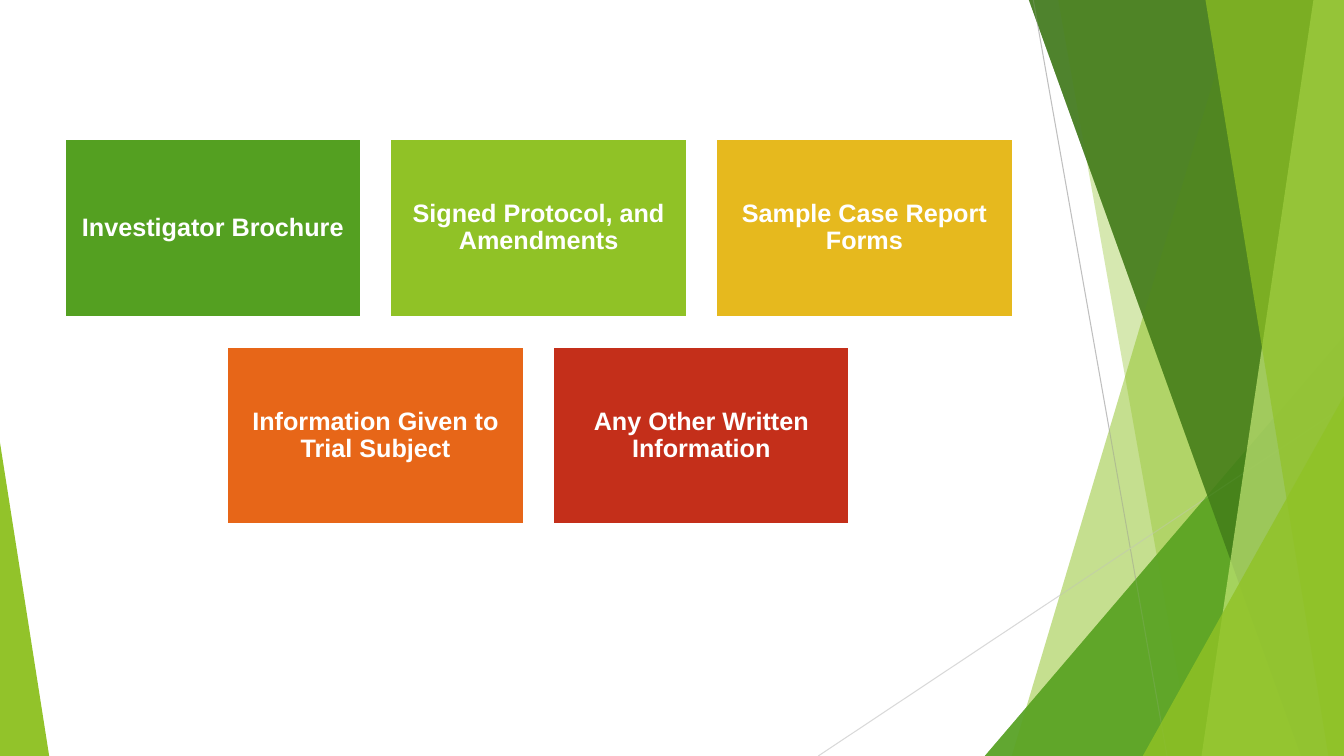
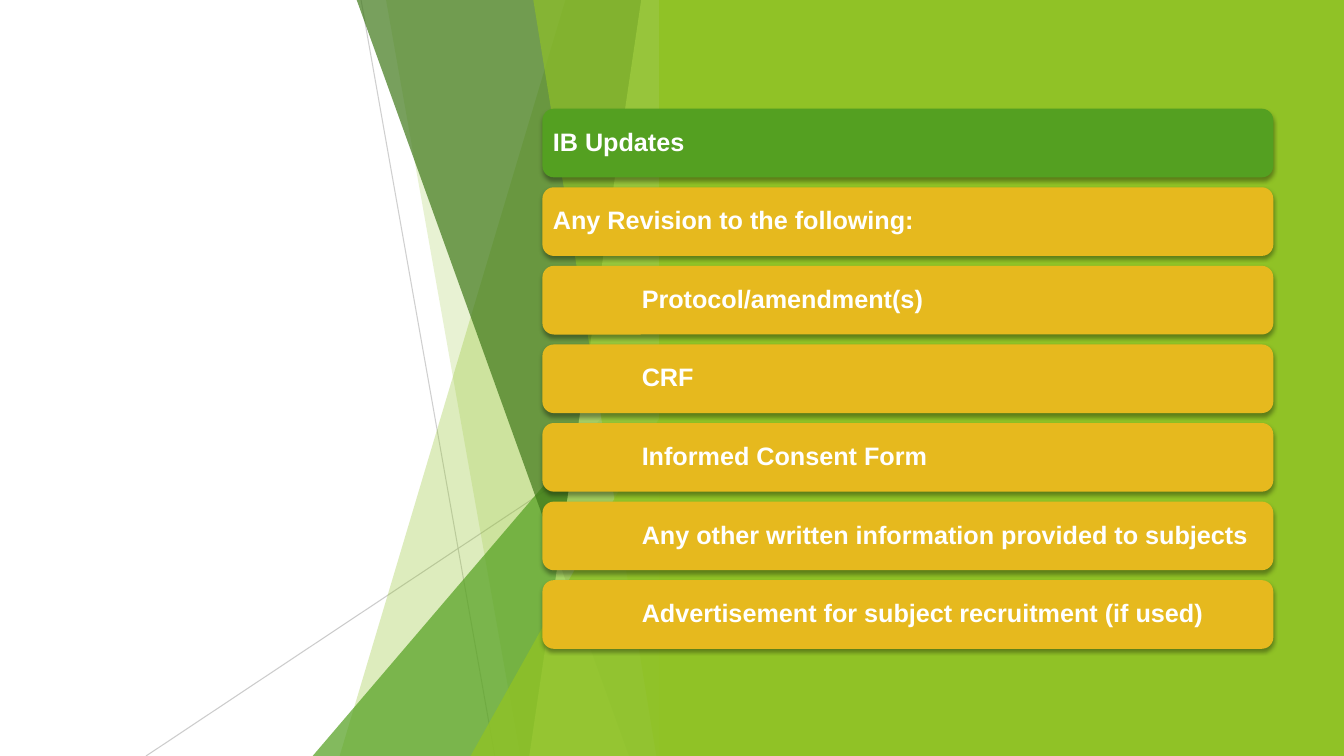
"""Build two slides of coloured cards over a fan of translucent green shards."""
from lxml import etree
from pptx import Presentation
from pptx.dml.color import RGBColor
from pptx.enum.shapes import MSO_CONNECTOR, MSO_SHAPE
from pptx.enum.text import MSO_ANCHOR, PP_ALIGN
from pptx.oxml.ns import qn
from pptx.util import Cm, Pt

RECTANGLE = MSO_SHAPE.RECTANGLE
ROUNDED = MSO_SHAPE.ROUNDED_RECTANGLE
TRIANGLE = MSO_SHAPE.ISOSCELES_TRIANGLE
STRAIGHT = MSO_CONNECTOR.STRAIGHT
MIDDLE = MSO_ANCHOR.MIDDLE
CENTER, LEFT = PP_ALIGN.CENTER, PP_ALIGN.LEFT

FONT = "Arial"
WHITE, GREEN, LIME = "FFFFFF", "54A021", "90C226"
GOLD, ORANGE, RED = "E6B91E", "E76618", "C42F1A"
FOREST, PALE_LIME = "3F7819", "C0E474"
GRAY, LIGHT_GRAY = "BFBFBF", "D9D9D9"
WIDTH, HEIGHT = 33.87, 19.05


def paint(shape, fill, color, opacity=100):
    """Apply a solid colour with an opacity in percent."""
    fill.solid()
    fill.fore_color.rgb = RGBColor.from_string(color)
    if opacity < 100:
        for color_node in shape.element.iter(qn("a:srgbClr")):
            etree.SubElement(color_node, qn("a:alpha"), val=str(opacity * 1000))


def add_block(slide, preset, left, top, width, height, color, opacity=100):
    """Add a preset shape without outline or shadow."""
    shape = slide.shapes.add_shape(preset, Cm(left), Cm(top), Cm(width), Cm(height))
    shape.shadow.inherit = False
    shape.line.fill.background()
    paint(shape, shape.fill, color, opacity)
    return shape


presentation = Presentation()
presentation.slide_width = Cm(WIDTH)
presentation.slide_height = Cm(HEIGHT)
blank = presentation.slide_layouts[6]
documents_slide = presentation.slides.add_slide(blank)
updates_slide = presentation.slides.add_slide(blank)

# top left, bottom left, top, colour, opacity
shards = [
    (31.19, 25.5, 0, LIME, 30),
    (26.67, 30.05, 0, LIME, 20),
    (WIDTH, 24.82, 8.46, GREEN, 72),
    (25.93, 32.79, 0, FOREST, 70),
    (33.1, 30.28, 0, PALE_LIME, 70),
    (30.38, 33.48, 0, LIME, 65),
    (WIDTH, 28.8, 9.98, LIME, 80),
]
ray_paths = [(26.04, 0, 29.41, HEIGHT), (WIDTH, 10.24, 20.62, HEIGHT)]
fans = [
    (documents_slide, 0, []),
    (documents_slide, 0, [(GRAY, 100), (LIGHT_GRAY, 100)]),
    (updates_slide, -16.94, [(GRAY, 75), (GRAY, 80)]),
]

for slide, shift, ray_styles in fans:
    for (x1, y1, x2, y2), (color, opacity) in zip(ray_paths, ray_styles):
        ray = slide.shapes.add_connector(
            STRAIGHT, Cm(x1 + shift), Cm(y1), Cm(x2 + shift), Cm(y2))
        ray.line.width = Pt(0.75)
        paint(ray, ray.line.fill, color, opacity)
        etree.SubElement(ray.element.spPr, qn("a:effectLst"))
    for top_left, bottom_left, top, color, opacity in shards:
        if top:
            triangle = add_block(slide, TRIANGLE, bottom_left + shift, top,
                                 WIDTH - bottom_left, HEIGHT - top, color, opacity)
            triangle.adjustments[0] = 1
            continue
        right = Cm(WIDTH + shift)
        builder = slide.shapes.build_freeform(Cm(top_left + shift), 0)
        builder.add_line_segments(
            [(right, 0), (right, Cm(HEIGHT)), (Cm(bottom_left + shift), Cm(HEIGHT))])
        shard = builder.convert_to_shape()
        shard.shadow.inherit = False
        shard.line.fill.background()
        paint(shard, shard.fill, color, opacity)

corner = add_block(documents_slide, TRIANGLE, 0, 11.15, 1.24, 7.9, LIME, 98)
corner.adjustments[0] = 0
add_block(updates_slide, RECTANGLE, 16.61, 0, WIDTH - 16.61, HEIGHT, LIME)

document_rows = [
    (1.63, [("Investigator Brochure", GREEN),
            ("Signed Protocol, and Amendments", LIME),
            ("Sample Case Report Forms", GOLD)]),
    (5.73, [("Information Given to Trial Subject", ORANGE),
            ("Any Other Written Information", RED)]),
]
updates = [
    ("IB Updates", GREEN, 0.18),
    ("Any Revision to the following:", GOLD, 0.18),
    ("Protocol/amendment(s)", GOLD, 2.42),
    ("CRF", GOLD, 2.42),
    ("Informed Consent Form", GOLD, 2.42),
    ("Any other written information provided to subjects", GOLD, 2.42),
    ("Advertisement for subject recruitment (if used)", GOLD, 2.42),
]

cards = []
for row, (row_left, documents) in enumerate(document_rows):
    for column, (text, color) in enumerate(documents):
        card = add_block(documents_slide, RECTANGLE, row_left + column * 8.21,
                         3.51 + row * 5.23, 7.47, 4.47, color)
        paint(card, card.line.fill, WHITE)
        card.line.width = Pt(1.5)
        cards.append((card, text, CENTER, 0.18))

for row, (text, color, indent) in enumerate(updates):
    card = add_block(updates_slide, ROUNDED, 13.67, 2.74 + row * 1.98, 18.42, 1.73, color)
    effects = card.element.spPr.find(qn("a:effectLst"))
    shadow = etree.SubElement(effects, qn("a:outerShdw"), blurRad=str(Pt(3)),
                              dist=str(Pt(2)), dir="5400000", rotWithShape="0")
    shadow_color = etree.SubElement(shadow, qn("a:srgbClr"), val="000000")
    etree.SubElement(shadow_color, qn("a:alpha"), val="35000")
    cards.append((card, text, LEFT, indent))

for card, text, alignment, indent in cards:
    frame = card.text_frame
    frame.word_wrap = True
    frame.vertical_anchor = MIDDLE
    frame.margin_left = Cm(indent)
    frame.margin_right = frame.margin_top = frame.margin_bottom = Cm(0.18)
    paragraph = frame.paragraphs[0]
    paragraph.alignment = alignment
    paragraph.line_spacing = 0.9
    run = paragraph.add_run()
    run.text = text
    run.font.name = FONT
    run.font.size = Pt(18)
    run.font.bold = True
    run.font.color.rgb = RGBColor.from_string(WHITE)

presentation.save("out.pptx")
